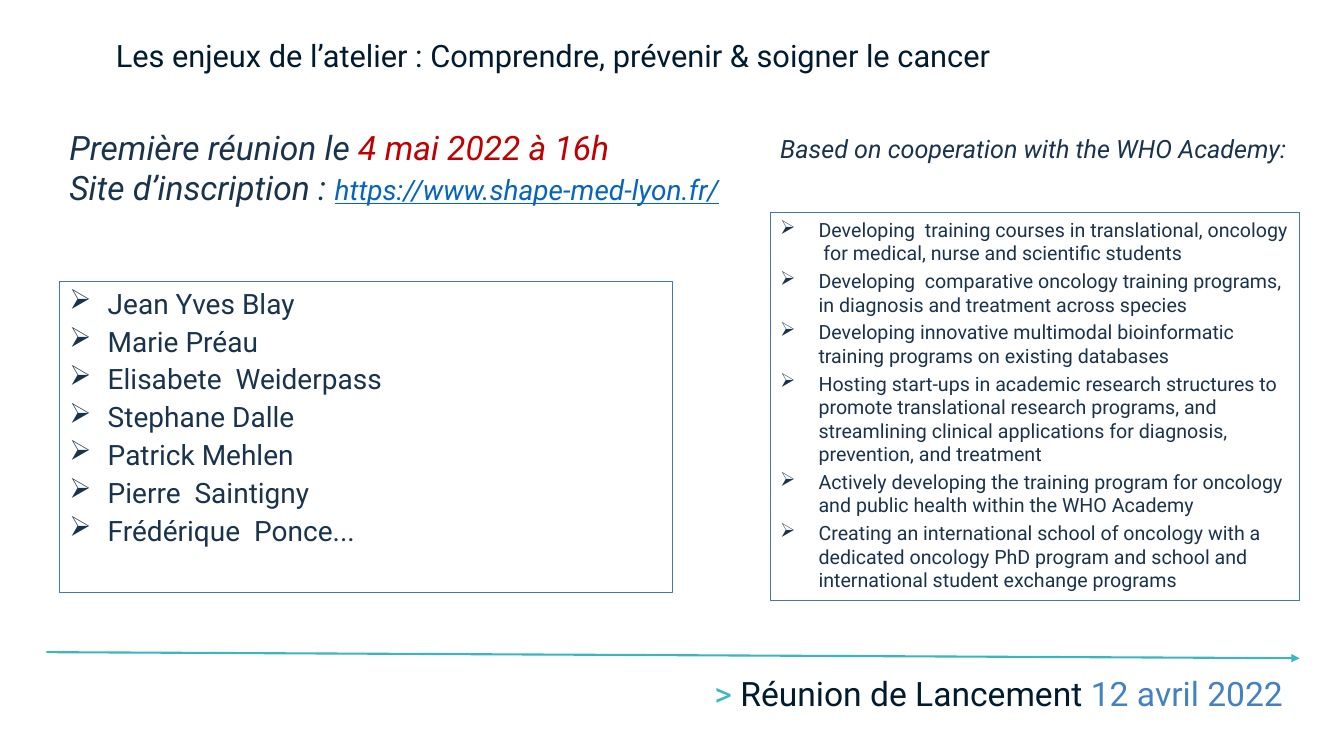
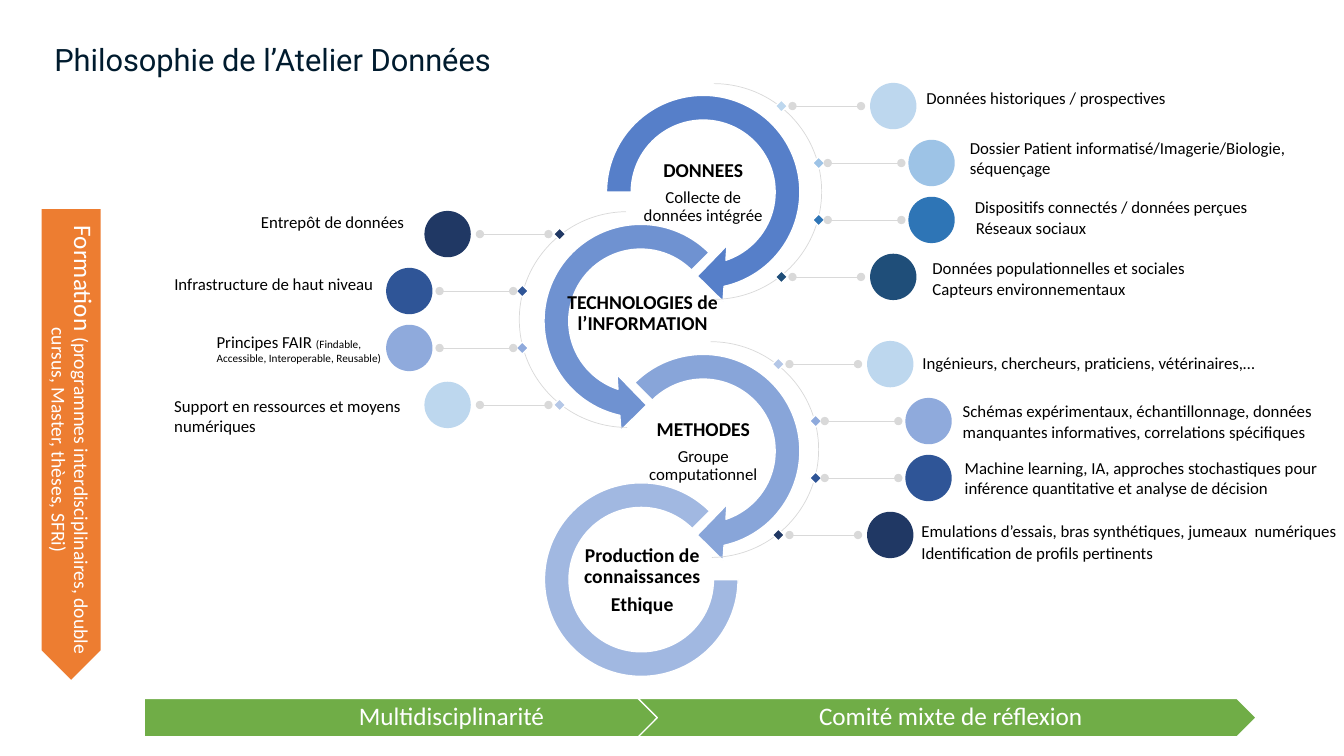
from lxml import etree
from pptx import Presentation
from pptx import util as u
from pptx.dml.color import RGBColor
from pptx.enum import shapes, text
from pptx.oxml import ns

SHAPE = shapes.MSO_SHAPE
CENTER = text.PP_ALIGN.CENTER
MIDDLE = text.MSO_ANCHOR.MIDDLE
HEADING, BODY = "Roboto", "Calibri"
NAVY, SLATE, TEAL, BLUE = "001B2E", "1A334C", "3BB5C0", "4472C4"
RED, LINK, DATE = "C00000", "0563C1", "4381C1"
BLACK, WHITE, GREY, GREEN, ORANGE = "000000", "FFFFFF", "D9D9D9", "70AD47", "ED7D31"
LABEL_INSETS = (0.1, 0.05, 0, 0.05)
TIGHT_INSETS = (0.01,) * 4
BAND_INSETS = (0.1, 0.05, 0.03, 0.05)

COURSES = [
    "Developing  training courses in translational, oncology  for medical, nurse and scientific students",
    "Developing  comparative oncology training programs, in diagnosis and treatment across species",
    "Developing innovative multimodal bioinformatic training programs on existing databases",
    "Hosting start-ups in academic research structures to promote translational research programs, "
    "and streamlining clinical applications for diagnosis,  prevention, and treatment",
    "Actively developing the training program for oncology and public health within the WHO Academy",
    "Creating an international school of oncology with a dedicated oncology PhD program and school "
    "and international student exchange programs",
]
MEMBERS = ["Jean Yves Blay", "Marie Préau", "Elisabete  Weiderpass", "Stephane Dalle",
           "Patrick Mehlen", "Pierre  Saintigny", "Frédérique  Ponce..."]

LABELS = [
    (9.09, 0.82, 2.84, "Données historiques / prospectives"),
    (9.52, 1.32, 3.42, "Dossier Patient informatisé/Imagerie/Biologie, séquençage"),
    (9.57, 1.9, 3.06, "Dispositifs connectés / données perçues"),
    (9.58, 2.11, 3.06, "Réseaux sociaux"),
    (9.15, 2.51, 3.63, "Données populationnelles et sociales"),
    (9.15, 2.72, 3.14, "Capteurs environnementaux"),
    (9.05, 3.45, 4.02, "Ingénieurs, chercheurs, praticiens, vétérinaires,…"),
    (9.45, 3.93, 3.84, "Schémas expérimentaux, échantillonnage, données manquantes informatives, "
                       "correlations spécifiques"),
    (9.47, 4.49, 3.8, "Machine learning, IA, approches stochastiques pour inférence quantitative "
                      "et analyse de décision"),
    (9.04, 5.12, 4.24, "Emulations d’essais, bras synthétiques, jumeaux  numériques"),
    (9.04, 5.34, 3.53, "Identification de profils pertinents"),
    (2.49, 2.05, 1.99, "Entrepôt de données"),
    (1.63, 2.67, 2.22, "Infrastructure de haut niveau"),
    (1.63, 3.88, 2.6, "Support en ressources et moyens numériques"),
]


def rgb(color):
    """Turn a hex string into a colour."""
    return RGBColor.from_string(color)


def add_child(parent, tag, **attrs):
    """Append a DrawingML element and return it."""
    return etree.SubElement(parent, ns.qn("a:" + tag), attrs)


def add_run(p, content, size=12, font=BODY, color=BLACK, bold=False, italic=False, underline=False):
    """Add one formatted run to a paragraph."""
    r = p.add_run()
    r.text = content
    f = r.font
    f.size, f.name, f.bold, f.italic, f.underline = u.Pt(size), font, bold, italic, underline
    f.color.rgb = rgb(color)


def write(sp, paragraphs, align=None, anchor=text.MSO_ANCHOR.TOP, insets=(0.1, 0.05, 0.1, 0.05),
          spacing=None, after=0, bullet=None, **fmt):
    """Fill a shape with paragraphs, each a string or a list of (text, format) runs."""
    tf = sp.text_frame
    tf.word_wrap, tf.vertical_anchor = True, anchor
    tf.margin_left, tf.margin_top, tf.margin_right, tf.margin_bottom = map(u.Inches, insets)
    for i, runs in enumerate(paragraphs):
        p = tf.add_paragraph() if i else tf.paragraphs[0]
        p.alignment = align or text.PP_ALIGN.LEFT
        p.space_after = u.Pt(after)
        if spacing:
            p.line_spacing = spacing
        if bullet:
            pPr = p._p.get_or_add_pPr()
            pPr.set("marL", str(u.Inches(0.38)))
            pPr.set("indent", str(-u.Inches(0.38)))
            add_child(pPr, "buChar", char=bullet)
        for content, extra in [(runs, {})] if isinstance(runs, str) else runs:
            add_run(p, content, **{**fmt, **extra})


def add_text(s, at, paragraphs, rotation=0, **fmt):
    """Place a text box."""
    sp = s.shapes.add_textbox(*map(u.Inches, at))
    sp.rotation = rotation
    write(sp, paragraphs, **fmt)


def add_shape(s, kind, at, fill=None, line=None, width=1, adj=(), rotation=0, alpha=None):
    """Place a preset shape with optional fill, outline and opacity."""
    sp = s.shapes.add_shape(kind, *map(u.Inches, at))
    sp.shadow.inherit = False
    sp.rotation = rotation
    for i, value in enumerate(adj):
        sp.adjustments[i] = value
    if fill:
        sp.fill.solid()
        sp.fill.fore_color.rgb = rgb(fill)
        if alpha:
            clr = sp._element.spPr.find(".//" + ns.qn("a:srgbClr"))
            add_child(clr, "alpha", val=str(alpha * 1000))
    else:
        sp.fill.background()
    if line:
        sp.line.color.rgb = rgb(line)
        sp.line.width = u.Pt(width)
    else:
        sp.line.fill.background()
    return sp


def add_line(s, start, end, color, width, **ends):
    """Draw a straight connector with the given line ends."""
    c = s.shapes.add_connector(shapes.MSO_CONNECTOR.STRAIGHT, *map(u.Inches, (*start, *end)))
    c.line.color.rgb = rgb(color)
    c.line.width = u.Pt(width)
    ln = c.line._get_or_add_ln()
    for tag, kind in ends.items():
        add_child(ln, tag, type=kind)
    add_child(c._element.spPr, "effectLst")


def add_title(s, x, y, content):
    """Write the slide title."""
    add_text(s, (x, y, 12, 0.47), [content], size=22, font=HEADING, color=NAVY)


def add_list(s, at, items, size):
    """Draw an outlined box holding an arrow-bulleted list."""
    sp = add_shape(s, SHAPE.RECTANGLE, at, line=BLUE, width=0.75)
    write(sp, items, size=size, font=HEADING, color=SLATE, after=3, bullet="➢")


def add_stage(s, at, *paragraphs):
    """Write the centred caption inside a ring."""
    add_text(s, at, paragraphs, align=CENTER, anchor=MIDDLE, insets=TIGHT_INSETS,
             spacing=0.9, after=5, size=14, bold=True)


def add_fan(s, cx, cy, side, dots, diamonds):
    """Draw an arc with four diamonds, each tied to a dot; side is 1 for right, -1 for left."""
    arc = 2.14
    add_shape(s, SHAPE.ARC, (cx - arc / 2, cy - arc / 2, arc, arc), line=GREY, width=0.5,
              adj=(162, 53.62), rotation=0 if side > 0 else 180)
    outer, inner = (0.67, 0.78, 1.46, 1.78), (1.04, 1.13, 1.86, 2.16)
    for i, (dot, diamond) in enumerate(zip(dots, diamonds)):
        y = cy + 0.565 * (i - 1.5)
        tip, start, end, far = (cx + side * d for d in (inner if i in (1, 2) else outer))
        add_shape(s, SHAPE.DIAMOND, (tip - 0.06, y - 0.06, 0.12, 0.12), diamond, WHITE)
        add_line(s, (start, y), (end, y), GREY, 0.5, headEnd="oval", tailEnd="oval")
        add_shape(s, SHAPE.OVAL, (far - 0.23, y - 0.23, 0.46, 0.46), dot)


def add_band(s, kind, at, text_at, runs, fill, rotation=0):
    """Draw an arrow band and its caption."""
    add_shape(s, kind, at, fill, WHITE, rotation=rotation)
    add_text(s, text_at, [runs], rotation, align=CENTER, anchor=MIDDLE, insets=BAND_INSETS,
             spacing=0.9, after=5, size=18, color=WHITE)


def build_workshop(s):
    """Build the slide on the aims of the workshop."""
    add_title(s, 1.05, 0.32, "Les enjeux de l’atelier : Comprendre, prévenir & soigner le cancer")
    add_text(s, (0.59, 1.21, 7.34, 0.9), [
        [("Première réunion le ", {}), ("4 mai 2022 à 16h", {"color": RED})],
        [("Site d’inscription : ", {}),
         ("https://www.shape-med-lyon.fr/", {"size": 20, "color": LINK, "underline": True})],
    ], size=24, font=HEADING, color=SLATE, italic=True)
    add_text(s, (7.64, 1.23, 5.6, 0.42), ["Based on cooperation with the WHO Academy:"],
             spacing=1.15, after=6, size=18, font=HEADING, color=SLATE, italic=True)
    add_list(s, (0.59, 2.79, 6.08, 3.09), MEMBERS, 20)
    add_list(s, (7.64, 2.11, 5.25, 3.85), COURSES, 14)
    add_line(s, (0.46, 6.47), (12.89, 6.53), TEAL, 1.5, tailEnd="triangle")
    add_text(s, (6.92, 6.53, 5.97, 0.74), [
        [(">", {"color": TEAL}), (" Réunion de Lancement ", {}), ("12 avril 2022", {"color": DATE})],
    ], align=CENTER, anchor=MIDDLE, spacing=0.9, size=24, font=HEADING, color=NAVY)


def build_data(s):
    """Build the slide on the philosophy of the data workshop."""
    add_title(s, 0.44, 0.36, "Philosophie de l’Atelier Données")
    ring = 2.23
    rings = [
        (SHAPE.CIRCULAR_ARROW, (5.86, 0.79, ring, ring), (0.11, 11.42, 45, 108, 0.125), 90),
        (SHAPE.LEFT_CIRCULAR_ARROW, (5.24, 2.07, ring, ring), (0.11, 11.42, 63, 189, 0.125), 77),
        (SHAPE.CIRCULAR_ARROW, (5.86, 3.36, ring, ring), (0.11, 11.42, 45, 135, 0.125), 63),
        (SHAPE.BLOCK_ARC, (5.4, 4.79, 1.92, 1.92), (0, 189, 0.127), 50),
    ]
    for kind, at, adj, alpha in rings:
        add_shape(s, kind, at, BLUE, WHITE, adj=adj, alpha=alpha)
    plain = {"size": 12, "bold": False}
    add_stage(s, (6.35, 1.6, 1.25, 0.62), "DONNEES", [("Collecte de données intégrée", plain)])
    add_stage(s, (5.61, 2.8, 1.53, 0.62), "TECHNOLOGIES de l’INFORMATION")
    add_stage(s, (6.35, 4.17, 1.25, 0.62), "METHODES", [("Groupe computationnel", plain)])
    add_stage(s, (5.6, 5.45, 1.54, 0.62), "Production de connaissances", "Ethique")

    sky = ["BDD7EE", "9DC3E6", "2E75B6", "1F4E79"]
    shades = ["8FAADC", "2F5597", "203864"]
    dots, diamonds = ["BDD7EE"] + shades, ["B4C7E7"] + shades
    add_fan(s, 7.08, 1.9, 1, sky, sky)
    add_fan(s, 7.05, 4.46, 1, dots, diamonds)
    add_fan(s, 6.22, 3.17, -1, dots[::-1], diamonds[::-1])
    for x, y, w, content in LABELS:
        add_text(s, (x, y, w, 0.3), [content], insets=LABEL_INSETS)
    add_text(s, (2.05, 3.24, 1.97, 0.44), [
        [("Principes FAIR ", {}), ("(Findable, Accessible, Interoperable, Reusable)", {"size": 8})],
    ], insets=LABEL_INSETS)

    add_band(s, SHAPE.PENTAGON, (1.43, 6.93, 6.13, 0.38), (1.43, 6.93, 6.03, 0.38),
             "Multidisciplinarité", GREEN)
    add_band(s, SHAPE.CHEVRON, (6.33, 6.93, 6.13, 0.38), (6.52, 6.93, 5.75, 0.38),
             "Comité mixte de réflexion", GREEN)
    add_band(s, SHAPE.PENTAGON, (-1.64, 4.11, 4.69, 0.6), (-1.56, 4.03, 4.54, 0.6), [
        ("Formation ", {}),
        ("(programmes interdisciplinaires, double cursus, Master, thèses, SFRi)", {"size": 14}),
    ], ORANGE, rotation=90)


def main():
    """Create the presentation and save it."""
    prs = Presentation()
    prs.slide_width, prs.slide_height = u.Inches(13.33), u.Inches(7.5)
    for build in (build_workshop, build_data):
        build(prs.slides.add_slide(prs.slide_layouts[6]))
    prs.save("out.pptx")


if __name__ == "__main__":
    main()
